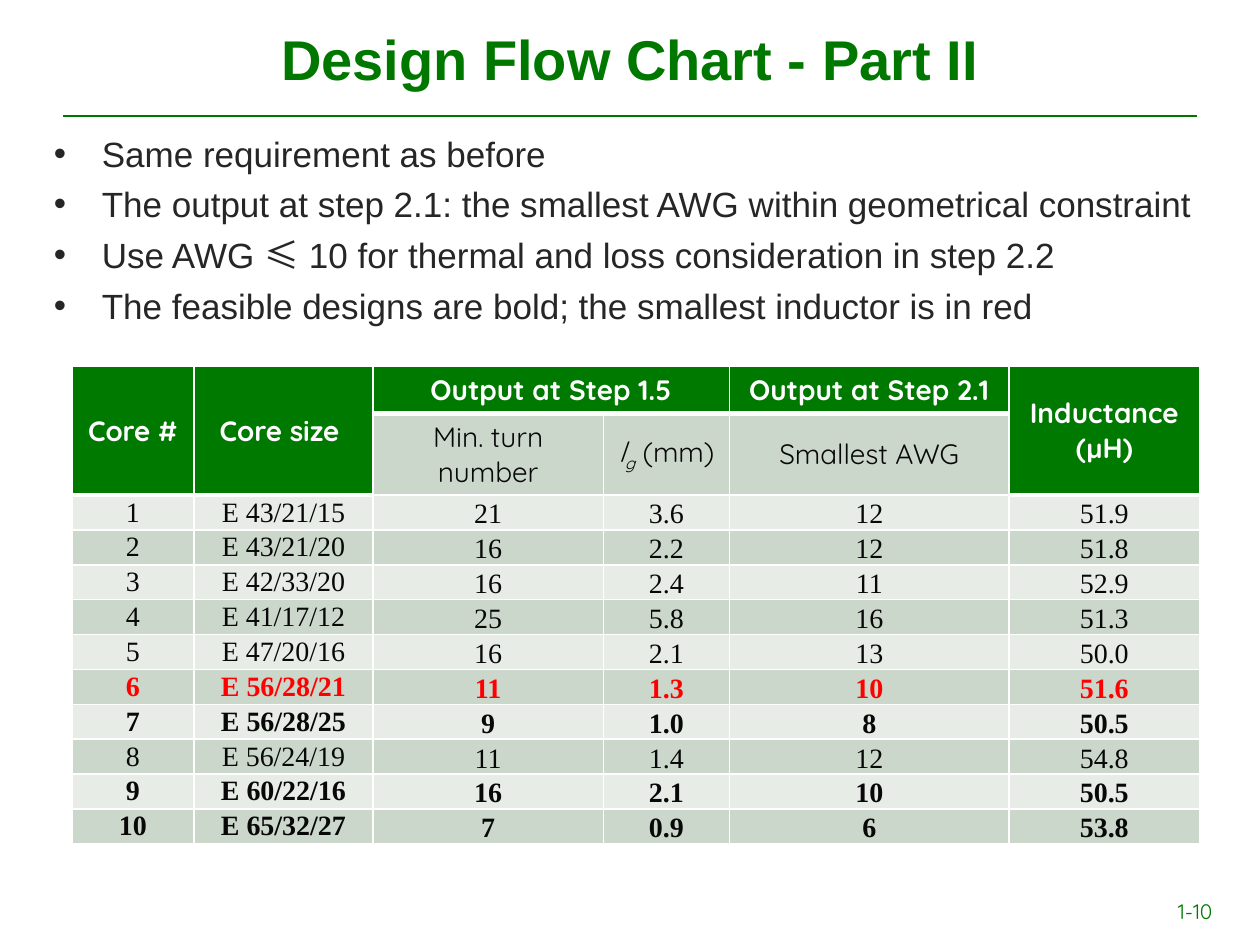
from lxml.etree import SubElement
from pptx import Presentation
from pptx.dml.color import RGBColor
from pptx.enum.shapes import MSO_CONNECTOR
from pptx.enum.text import MSO_ANCHOR, PP_ALIGN
from pptx.oxml.ns import qn
from pptx.util import Inches, Pt

GREEN, WHITE, INK, RED = "007900", "FFFFFF", "080808", "FF0000"
BANDS = ("E7ECE7", "CCD7CC")
COLUMN_WIDTHS = (0.97, 1.42, 1.83, 1, 2.22, 1.51)
ROW_HEIGHTS = (0.37, 0.65) + (0.25,) * 10
MERGES = (((0, 0), (1, 0)), ((0, 1), (1, 1)), ((0, 2), (0, 3)), ((0, 5), (1, 5)))
HEADINGS = {0: "Core #", 1: "Core size ", 2: "Output at Step 1.5",
            4: "Output at Step 2.1", 5: "Inductance (µH)"}
SUBHEADINGS = {2: "Min. turn number", 4: "Smallest AWG"}
DESIGNS = (
    ("1", "E 43/21/15", "21", "3.6", "12", "51.9"),
    ("2", "E 43/21/20", "16", "2.2", "12", "51.8"),
    ("3", "E 42/33/20", "16", "2.4", "11", "52.9"),
    ("4", "E 41/17/12", "25", "5.8", "16", "51.3"),
    ("5", "E 47/20/16", "16", "2.1", "13", "50.0"),
    ("6", "E 56/28/21", "11", "1.3", "10", "51.6"),
    ("7", "E 56/28/25", "9", "1.0", "8", "50.5"),
    ("8", "E 56/24/19", "11", "1.4", "12", "54.8"),
    ("9", "E 60/22/16", "16", "2.1", "10", "50.5"),
    ("10", "E 65/32/27", "7", "0.9", "6", "53.8"),
)
FEASIBLE, SMALLEST = {"6", "7", "9", "10"}, "6"
REMARKS = (
    ("Same requirement as before",),
    ("The output at step 2.1: the smallest AWG within geometrical constraint",),
    ("Use AWG ", "≤", " 10 for thermal and loss consideration in step 2.2"),
    ("The feasible designs are bold; the smallest inductor is in red",),
)


def rgb(value):
    """Return the colour for a hex string."""
    return RGBColor.from_string(value)


def is_header(row, column):
    """Tell whether a cell belongs to the green header."""
    return row == 0 or (row == 1 and column in (0, 1, 5))


class SlideBuilder:
    """Hold the style and the current slide."""

    def __init__(self, slide):
        """Keep the slide and its fonts."""
        self.slide = slide
        self.body_font = "Arial"
        self.label_font = "Quicksand"
        self.data_font = "Times New Roman"

    def style(self, font, name, size, color, bold=False):
        """Set the look of a font."""
        font.name, font.size, font.bold = name, Pt(size), bold
        font.color.rgb = rgb(color)

    def title(self, text, left, top, width, height):
        """Place and format the title."""
        title = self.slide.shapes.title
        title.left, title.top = Inches(left), Inches(top)
        title.width, title.height = Inches(width), Inches(height)
        title.text_frame.text = text
        title.text_frame.vertical_anchor = MSO_ANCHOR.MIDDLE
        heading = title.text_frame.paragraphs[0]
        heading.alignment = PP_ALIGN.CENTER
        self.style(heading.font, self.body_font, 32, "007800", True)

    def rule(self, left, right, y):
        """Draw a thin horizontal line."""
        rule = self.slide.shapes.add_connector(
            MSO_CONNECTOR.STRAIGHT, Inches(left), Inches(y), Inches(right), Inches(y))
        rule.line.color.rgb = rgb("007600")
        rule.line.width = Pt(0.75)
        SubElement(rule._element.spPr, qn("a:effectLst"))

    def text_frame(self, left, top, width, height):
        """Add a wrapping text box and return its frame."""
        frame = self.slide.shapes.add_textbox(
            Inches(left), Inches(top), Inches(width), Inches(height)).text_frame
        frame.word_wrap = True
        return frame

    def bullets(self, remarks, left, top, width, height):
        """Add the bulleted remarks."""
        frame = self.text_frame(left, top, width, height)
        for index, parts in enumerate(remarks):
            remark = frame.add_paragraph() if index else frame.paragraphs[0]
            properties = remark._p.get_or_add_pPr()
            properties.set("marL", str(Inches(0.38)))
            properties.set("indent", str(-Inches(0.38)))
            SubElement(properties, qn("a:buFont"), typeface=self.body_font)
            SubElement(properties, qn("a:buChar"), char="•")
            if index:
                remark.space_before = Pt(5)
            self.style(remark.font, self.body_font, 20, "262626")
            for part in parts:
                run = remark.add_run()
                run.text = part
                if part == "≤":
                    run.font.name = "Noto Sans CJK SC"
                    SubElement(run._r.get_or_add_rPr(), qn("a:ea"), typeface="Noto Sans CJK SC")

    def page_number(self, text, left, top, width, height):
        """Add the page number."""
        number = self.text_frame(left, top, width, height).paragraphs[0]
        number.text = text
        self.style(number.font, self.label_font, 12, GREEN)

    def borders(self, cell, top, bottom):
        """Give a cell white borders."""
        properties = cell._tc.get_or_add_tcPr()
        for side, width in (("L", 1), ("R", 1), ("T", top), ("B", bottom)):
            line = SubElement(properties, qn(f"a:ln{side}"), w=str(Pt(width)))
            SubElement(SubElement(line, qn("a:solidFill")), qn("a:srgbClr"), val=WHITE)

    def cell_text(self, cell, text, name, color, bold):
        """Write centred text in a cell."""
        entry = cell.text_frame.paragraphs[0]
        entry.text = text
        entry.alignment = PP_ALIGN.CENTER
        self.style(entry.font, name, 16, color, bold)
        cell.vertical_anchor = MSO_ANCHOR.MIDDLE

    def gap_label(self, cell):
        """Write the air gap symbol with its subscript and unit."""
        self.cell_text(cell, "", self.label_font, INK, False)
        for text, italic, baseline in (("l", True, 0), ("g", True, -25000), (" (mm)", False, 0)):
            run = cell.text_frame.paragraphs[0].add_run()
            run.text, run.font.italic = text, italic
            if baseline:
                run._r.get_or_add_rPr().set("baseline", str(baseline))

    def design_row(self, cells, design):
        """Write one core design."""
        color = RED if design[0] == SMALLEST else INK
        for column, (cell, value) in enumerate(zip(cells, design)):
            self.cell_text(cell, value, self.data_font, color, design[0] in FEASIBLE)
            side = 0.07 if column < 2 else 0.01
            cell.margin_left = cell.margin_right = Inches(side)
            cell.margin_top = Inches(0 if column < 2 else 0.01)
            cell.margin_bottom = 0
            if column >= 2:
                cell.vertical_anchor = MSO_ANCHOR.BOTTOM

    def design_table(self, left, top):
        """Add the table of core designs."""
        table = self.slide.shapes.add_table(
            len(ROW_HEIGHTS), len(COLUMN_WIDTHS), Inches(left), Inches(top),
            Inches(sum(COLUMN_WIDTHS)), Inches(sum(ROW_HEIGHTS))).table
        table.first_row = table.horz_banding = False
        for column, width in zip(table.columns, COLUMN_WIDTHS):
            column.width = Inches(width)
        for row, height in enumerate(ROW_HEIGHTS):
            table.rows[row].height = Inches(height)
            for column in range(len(COLUMN_WIDTHS)):
                cell = table.cell(row, column)
                header = is_header(row, column)
                below_header = row > 0 and is_header(row - 1, column)
                self.borders(cell, 3 if below_header else 1, 3 if header else 1)
                cell.fill.solid()
                cell.fill.fore_color.rgb = rgb(GREEN if header else BANDS[row % 2])
        for first, last in MERGES:
            table.cell(*first).merge(table.cell(*last))
        for column, text in HEADINGS.items():
            self.cell_text(table.cell(0, column), text, self.label_font, WHITE, True)
        for column, text in SUBHEADINGS.items():
            self.cell_text(table.cell(1, column), text, self.label_font, INK, False)
        self.gap_label(table.cell(1, 3))
        for row, design in enumerate(DESIGNS, start=2):
            self.design_row(table.rows[row].cells, design)


def main():
    """Build the design flow slide."""
    deck = Presentation()
    deck.slide_width, deck.slide_height = Inches(10), Inches(7.5)
    builder = SlideBuilder(deck.slides.add_slide(deck.slide_layouts[5]))
    builder.rule(0.5, 9.5, 0.92)
    builder.title("Design Flow Chart - Part II", 0.5, 0, 9, 0.92)
    builder.page_number("1-10", 9.25, 7.08, 0.67, 0.33)
    builder.bullets(REMARKS, 0.33, 1, 9.33, 1.83)
    builder.design_table(0.57, 2.91)
    deck.save("out.pptx")


if __name__ == "__main__":
    main()
